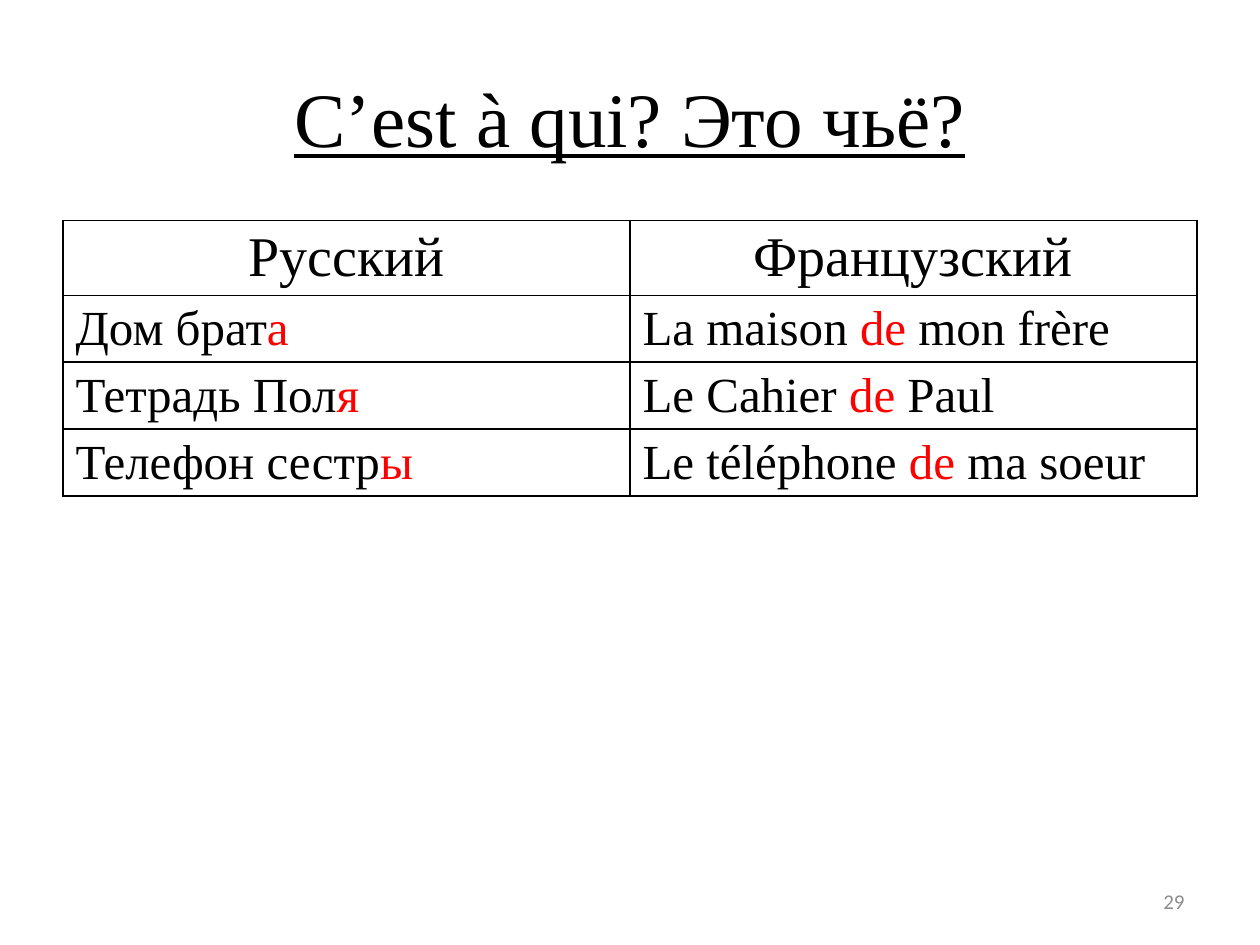
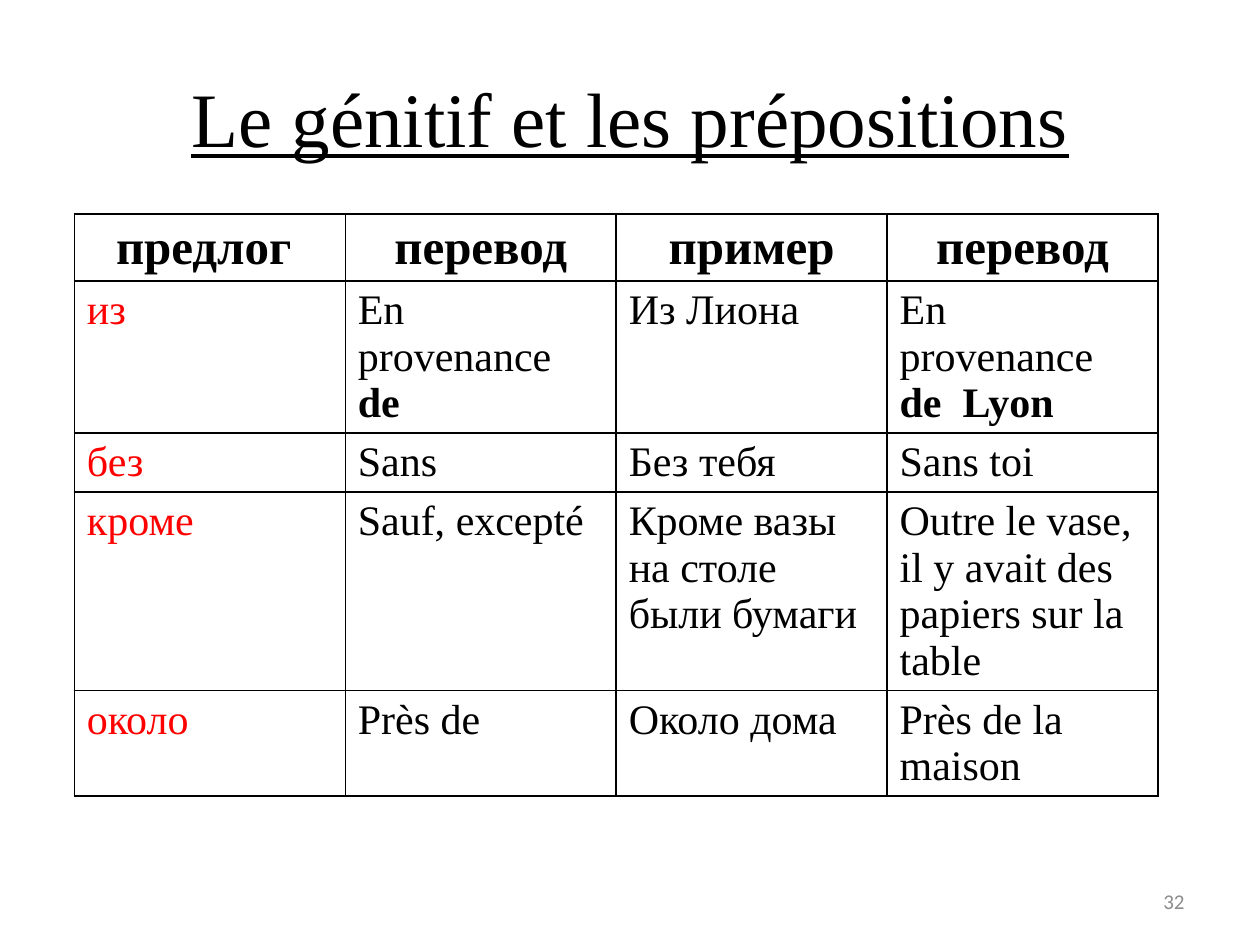
from dataclasses import dataclass

import lxml.etree
import pptx
import pptx.dml.color
import pptx.enum.text
import pptx.oxml.ns
import pptx.util

PX = 9144  # one hundred px to the inch
BLACK, RED, GRAY = "000000", "FF0000", "8C8C8C"
SERIF, SANS = "Times New Roman", "Calibri"
ALIGN = pptx.enum.text.PP_ALIGN
MIDDLE = pptx.enum.text.MSO_ANCHOR.MIDDLE
TITLE_ONLY = 5


@dataclass(frozen=True)
class Span:
    text: str
    color: str = BLACK
    bold: bool = False


Line = tuple[Span, ...]
Cell = tuple[Line, ...]


@dataclass(frozen=True)
class Grid:
    left: int
    top: int
    height: int
    column_width: int
    header_height: int
    row_height: int
    header_size: int
    header_bold: bool
    body_size: int
    headers: tuple[str, ...]
    rows: tuple[tuple[Cell, ...], ...]


@dataclass(frozen=True)
class Lesson:
    title: str
    number: int
    grid: Grid


def plain(text: str) -> Cell:
    return ((Span(text),),)


def red(text: str) -> Cell:
    return ((Span(text, RED),),)


def owner(stem: str, ending: str) -> Cell:
    """A Russian phrase with its genitive ending in red."""
    return ((Span(stem), Span(ending, RED)),)


def belonging(thing: str, person: str) -> Cell:
    """A French phrase with its preposition in red."""
    return ((Span(f"{thing} "), Span("de", RED), Span(f" {person}")),)


def origin(ending: str) -> Cell:
    return ((Span("En provenance"),), (Span(ending, bold=True),))


LESSONS = (
    Lesson("C’est à qui? Это чьё?", 29, Grid(
        left=50, top=175, height=233, column_width=450, header_height=58, row_height=41,
        header_size=32, header_bold=False, body_size=28,
        headers=("Русский", "Французский"),
        rows=(
            (owner("Дом брат", "а"), belonging("La maison", "mon frère")),
            (owner("Тетрадь Пол", "я"), belonging("Le Cahier", "Paul")),
            (owner("Телефон сестр", "ы"), belonging("Le téléphone", "ma soeur")),
        ))),
    Lesson("Le génitif et les prépositions", 32, Grid(
        left=59, top=170, height=497, column_width=215, header_height=41, row_height=41,
        header_size=28, header_bold=True, body_size=24,
        headers=("предлог ", "перевод", "пример", "перевод"),
        rows=(
            (red("из"), origin("de"), plain("Из Лиона"), origin("de  Lyon")),
            (red("без"), plain("Sans"), plain("Без тебя"), plain("Sans toi")),
            (red("кроме"), plain("Sauf, excepté"), plain("Кроме вазы на столе были бумаги"),
             plain("Outre le vase, il y avait des papiers sur la table")),
            (red("около"), plain("Près de"), plain("Около дома"), plain("Près de la maison")),
        ))),
)


def px(length: int) -> pptx.util.Emu:
    return pptx.util.Emu(length * PX)


def rgb(color: str) -> pptx.dml.color.RGBColor:
    return pptx.dml.color.RGBColor.from_string(color)


def style_font(font, size: int, color: str = BLACK, name: str = SERIF, bold: bool = False) -> None:
    font.size = pptx.util.Pt(size)
    font.name = name
    font.bold = bold
    font.color.rgb = rgb(color)


def border_cell(cell, color: str = BLACK, width: int = 1) -> None:
    properties = cell._tc.get_or_add_tcPr()
    for side in ("lnL", "lnR", "lnT", "lnB"):
        line = lxml.etree.SubElement(properties, pptx.oxml.ns.qn(f"a:{side}"),
                                     w=str(pptx.util.Pt(width)))
        fill = lxml.etree.SubElement(line, pptx.oxml.ns.qn("a:solidFill"))
        lxml.etree.SubElement(fill, pptx.oxml.ns.qn("a:srgbClr"), val=color)


def fill_cell(cell, lines: Cell, size: int, align: ALIGN) -> None:
    border_cell(cell)
    cell.fill.background()
    frame = cell.text_frame
    for index, line in enumerate(lines):
        para = frame.add_paragraph() if index else frame.paragraphs[0]
        para.alignment = align
        for span in line:
            run = para.add_run()
            run.text = span.text
            style_font(run.font, size, span.color, bold=span.bold)


def add_title(page, text: str) -> None:
    title = page.shapes.title
    title.left, title.top, title.width, title.height = px(50), px(30), px(900), px(125)
    frame = title.text_frame
    frame.text = text
    frame.vertical_anchor = MIDDLE
    para = frame.paragraphs[0]
    para.alignment = ALIGN.CENTER
    font = para.runs[0].font
    style_font(font, 44)
    font.underline = True


def add_grid(page, grid: Grid) -> None:
    columns = len(grid.headers)
    holder = page.shapes.add_table(len(grid.rows) + 1, columns, px(grid.left), px(grid.top),
                                   px(columns * grid.column_width), px(grid.height))
    table = holder.table
    table.first_row = table.horz_banding = False
    for column in table.columns:
        column.width = px(grid.column_width)
    for index, row in enumerate(table.rows):
        row.height = px(grid.row_height if index else grid.header_height)
    holder.height = px(grid.height)
    for column, header in enumerate(grid.headers):
        lines = ((Span(header, bold=grid.header_bold),),)
        fill_cell(table.cell(0, column), lines, grid.header_size, ALIGN.CENTER)
    for row, cells in enumerate(grid.rows, start=1):
        for column, lines in enumerate(cells):
            fill_cell(table.cell(row, column), lines, grid.body_size, ALIGN.LEFT)


def add_page_number(page, number: int) -> None:
    box = page.shapes.add_textbox(px(717), px(695), px(233), px(40))
    frame = box.text_frame
    frame.word_wrap = True
    frame.vertical_anchor = MIDDLE
    frame.text = str(number)
    para = frame.paragraphs[0]
    para.alignment = ALIGN.RIGHT
    style_font(para.runs[0].font, 12, GRAY, SANS)


def main() -> None:
    deck = pptx.Presentation()
    deck.slide_width, deck.slide_height = px(1000), px(750)
    for lesson in LESSONS:
        page = deck.slides.add_slide(deck.slide_layouts[TITLE_ONLY])
        add_title(page, lesson.title)
        add_grid(page, lesson.grid)
        add_page_number(page, lesson.number)
    deck.save("out.pptx")


if __name__ == "__main__":
    main()
